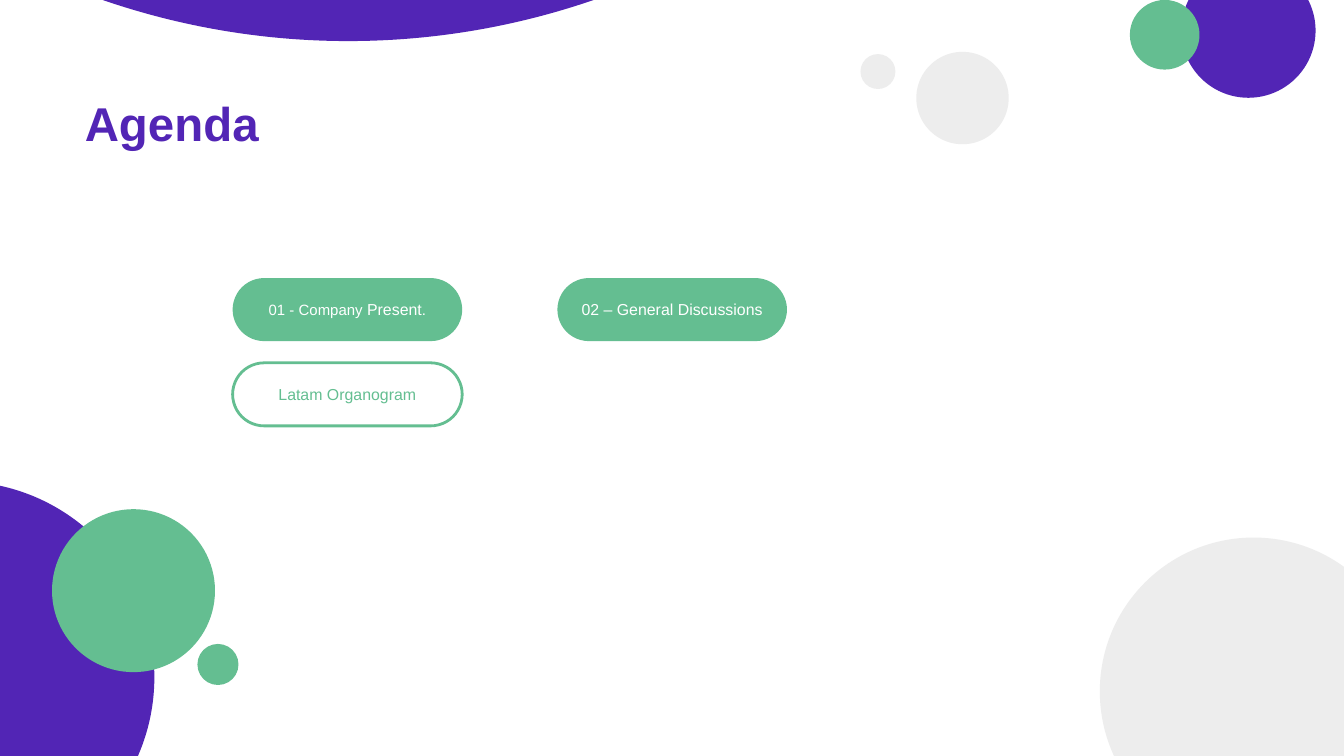
from pptx import Presentation
from pptx.dml.color import RGBColor as RGB
from pptx.enum.shapes import MSO_SHAPE as Shape
from pptx.enum.text import MSO_ANCHOR as Anchor, MSO_AUTO_SIZE as Fit, PP_ALIGN as Align
from pptx.util import Pt

TITLE = "Agenda"

# column, row, filled, text pieces with their size
TOPICS = [
    (0, 0, True, [("01 - Company ", "small"), ("Present", "body"), (".", "small")]),
    (0, 1, False, [("Latam Organogram", "body")]),
    (1, 0, True, [("02 – General Discussions", "body")]),
]

# left, top, diameter, colour
CIRCLES = [
    (-127.5, 257.8, 210.2, "purple"),
    (27.9, 272.8, 87.3, "green"),
    (105.8, 345, 22, "green"),
    (589.2, 288, 164.8, "grey"),
    (490.9, 27.8, 49.5, "grey"),
    (461, 29, 18.7, "grey"),
    (632.8, -19.6, 72, "purple"),
    (605.3, 0, 37.3, "green"),
    (-217.4, -785.8, 807.8, "purple"),
]

THEME = {
    "font": "Arial",
    "purple": RGB.from_string("5225B5"),
    "green": RGB.from_string("64BE91"),
    "grey": RGB.from_string("EDEDED"),
    "white": RGB.from_string("FFFFFF"),
    "title": Pt(25.4), "body": Pt(8.5), "small": Pt(8),
}

LEFT, TOP = 124.6, 149
PILL_W, PILL_H = 123, 33.8
STEP_X, STEP_Y = 174, 45.4


def style(font, size, color):
    font.name = THEME["font"]
    font.size = THEME[size]
    font.color.rgb = THEME[color]


def inset(frame, gap):
    frame.margin_left = frame.margin_right = Pt(gap)
    frame.margin_top = frame.margin_bottom = Pt(gap)


def add_form(slide, kind, box, fill):
    form = slide.shapes.add_shape(kind, *map(Pt, box))
    form.shadow.inherit = False
    form.fill.solid()
    form.fill.fore_color.rgb = THEME[fill]
    form.line.fill.background()
    return form


def add_title(slide):
    title = slide.shapes.title
    title.left, title.top, title.width, title.height = map(Pt, (45.4, 56.2, 213.8, 53.3))
    frame = title.text_frame
    frame.text = TITLE
    frame.auto_size = Fit.NONE
    frame.vertical_anchor = Anchor.TOP
    inset(frame, 0)
    para = frame.paragraphs[0]
    para.alignment = Align.LEFT
    para.line_spacing = 0.8
    font = para.runs[0].font
    style(font, "title", "purple")
    font.bold = True


def add_topic(slide, col, row, filled, parts):
    box = (LEFT + col * STEP_X, TOP + row * STEP_Y, PILL_W, PILL_H)
    pill = add_form(slide, Shape.ROUNDED_RECTANGLE, box, "green" if filled else "white")
    pill.adjustments[0] = 0.5
    if not filled:
        pill.line.color.rgb = THEME["green"]
        pill.line.width = Pt(1.5)
    frame = pill.text_frame
    frame.word_wrap = True
    frame.vertical_anchor = Anchor.MIDDLE
    inset(frame, 6.5)
    para = frame.paragraphs[0]
    para.alignment = Align.CENTER
    for text, size in parts:
        run = para.add_run()
        run.text = text
        style(run.font, size, "white" if filled else "green")


def main():
    deck = Presentation()
    deck.slide_width, deck.slide_height = Pt(720), Pt(405)
    slide = deck.slides.add_slide(deck.slide_layouts[5])
    add_title(slide)
    for topic in TOPICS:
        add_topic(slide, *topic)
    for left, top, size, color in CIRCLES:
        add_form(slide, Shape.OVAL, (left, top, size, size), color)
    deck.save("out.pptx")


if __name__ == "__main__":
    main()
